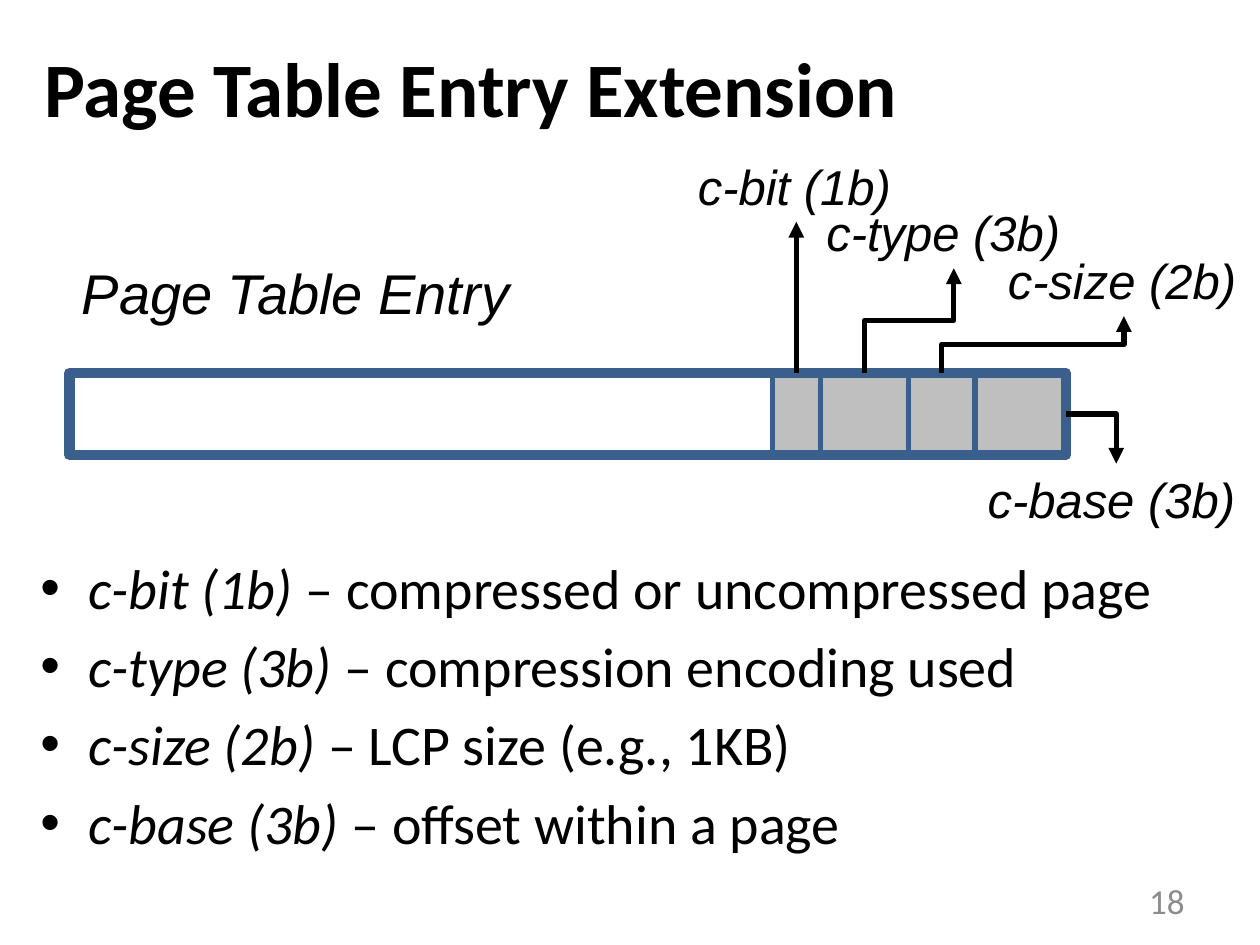
"""Builds the slide on the page table entry extension."""
from itertools import accumulate

from lxml.etree import SubElement
from pptx import Presentation
from pptx.dml.color import RGBColor
from pptx.enum.shapes import MSO_CONNECTOR, MSO_SHAPE
from pptx.enum.text import MSO_ANCHOR, PP_ALIGN
from pptx.oxml.ns import qn
from pptx.util import Inches, Pt

THEME = {
    "ink": RGBColor.from_string("000000"),
    "muted": RGBColor.from_string("8C8C8C"),
    "edge": RGBColor.from_string("3A5F8C"),
    "field": RGBColor.from_string("BFBFBF"),
    "heading": "Calibri",
    "label": "Arial",
    "title_size": 44,
    "body_size": 32,
    "label_size": 28,
    "number_size": 20,
    "thin": Pt(3),
    "thick": Pt(6),
}

deck = Presentation()
deck.slide_width, deck.slide_height = Inches(10), Inches(7.5)
CELL = deck.slide_width / 100


def grid(*cells):
    """Turns grid columns and rows into slide lengths."""
    return [round(cell * CELL) for cell in cells]


def write(paragraph, text, *, size, font, color=THEME["ink"], bold=False, italic=False):
    """Appends one formatted run to a paragraph."""
    run = paragraph.add_run()
    run.text = text
    run.font.size, run.font.name = Pt(size), font
    run.font.bold, run.font.italic = bold, italic
    run.font.color.rgb = color


slide = deck.slides.add_slide(deck.slide_layouts[5])
shapes = slide.shapes

title = shapes.title
title.left, title.top, title.width, title.height = grid(2.5, 0.6, 90, 12.5)
title.text_frame.vertical_anchor = MSO_ANCHOR.MIDDLE
heading = title.text_frame.paragraphs[0]
heading.alignment = PP_ALIGN.LEFT
write(heading, "Page Table Entry Extension", size=THEME["title_size"],
      font=THEME["heading"], bold=True)

number = shapes.add_textbox(*grid(71.7, 69.5, 23.3, 4)).text_frame
number.word_wrap, number.vertical_anchor = True, MSO_ANCHOR.MIDDLE
number.paragraphs[0].alignment = PP_ALIGN.RIGHT
write(number.paragraphs[0], "18", size=THEME["number_size"],
      font=THEME["heading"], color=THEME["muted"])

entry_left, entry_top, entry_width, entry_height = 5.5, 29.6, 79.1, 6.5
entry_right = entry_left + entry_width
field_widths = [3.8, 7, 5.3, 7.2]
field_lefts = list(accumulate(field_widths[:-1], initial=entry_right - sum(field_widths)))
bars = [(left, width, THEME["thin"]) for left, width in zip(field_lefts, field_widths)]
bars.append((entry_left, entry_width, THEME["thick"]))
for left, width, weight in bars:
    bar = shapes.add_shape(MSO_SHAPE.RECTANGLE, *grid(left, entry_top, width, entry_height))
    bar.shadow.inherit = False
    bar.line.color.rgb, bar.line.width = THEME["edge"], weight
    if weight == THEME["thick"]:
        bar.fill.background()
    else:
        bar.fill.solid()
        bar.fill.fore_color.rgb = THEME["field"]

label_height = 5.7
labels = [
    ("c-bit (1b)", 54.4, 11.9, 17.7, 63.2),
    ("c-type (3b)", 64.6, 15.6, 22.2, 75.7),
    ("c-size (2b)", 79, 19.4, 20.5, 89.2),
    ("c-base (3b)", 77.4, 36.8, 22.3, 88.6),
]
for (name, left, top, width, tip), field_left, field_width in zip(
        labels, field_lefts, field_widths):
    label = shapes.add_textbox(*grid(left, top, width, label_height)).text_frame
    label.word_wrap = True
    write(label.paragraphs[0], name, size=THEME["label_size"],
          font=THEME["label"], italic=True)

    rises = top < entry_top
    if rises:
        start, end = field_left + field_width / 2, top + label_height
        middle_x, middle_y = (start + tip) / 2, (entry_top + end) / 2
        half_rise, half_run = (entry_top - end) / 2, (tip - start) / 2
        ends = grid(middle_x + half_rise, middle_y + half_run,
                    middle_x - half_rise, middle_y - half_run)
    else:
        ends = grid(entry_right, entry_top + entry_height / 2, tip, top)
    arrow = shapes.add_connector(MSO_CONNECTOR.ELBOW, *ends)
    arrow.line.color.rgb, arrow.line.width = THEME["ink"], THEME["thin"]
    properties = arrow._element.spPr
    if rises:
        properties.get_or_add_xfrm().set("rot", str(90 * 60000))
    else:
        properties.find(qn("a:prstGeom")).set("prst", "bentConnector2")
    SubElement(properties.get_or_add_ln(), qn("a:tailEnd"), type="triangle")
    SubElement(properties, qn("a:effectLst"))

caption = shapes.add_textbox(*grid(entry_left, 20, 36.2, 6.4)).text_frame
caption.word_wrap = False
write(caption.paragraphs[0], "Page Table Entry", size=THEME["body_size"],
      font=THEME["label"], italic=True)

meanings = [
    "compressed or uncompressed page",
    "compression encoding used",
    "LCP size (e.g., 1KB)",
    "offset within a page",
]
legend = shapes.add_textbox(*grid(2, 43.3, 93, 26)).text_frame
legend.word_wrap = True
legend.margin_left, legend.margin_top, legend.margin_right, legend.margin_bottom = grid(
    1.2, 0.6, 1.2, 0.6)
hanging = Inches(0.38)
for index, (label, meaning) in enumerate(zip(labels, meanings)):
    point = legend.add_paragraph() if index else legend.paragraphs[0]
    point.space_before = Pt(0.2 * THEME["body_size"])
    layout = point._p.get_or_add_pPr()
    layout.set("marL", str(hanging))
    layout.set("indent", str(-hanging))
    SubElement(layout, qn("a:buFont"), typeface=THEME["label"])
    SubElement(layout, qn("a:buChar"), char="•")
    write(point, label[0], size=THEME["body_size"], font=THEME["heading"], italic=True)
    write(point, f" – {meaning}", size=THEME["body_size"], font=THEME["heading"])

deck.save("out.pptx")
